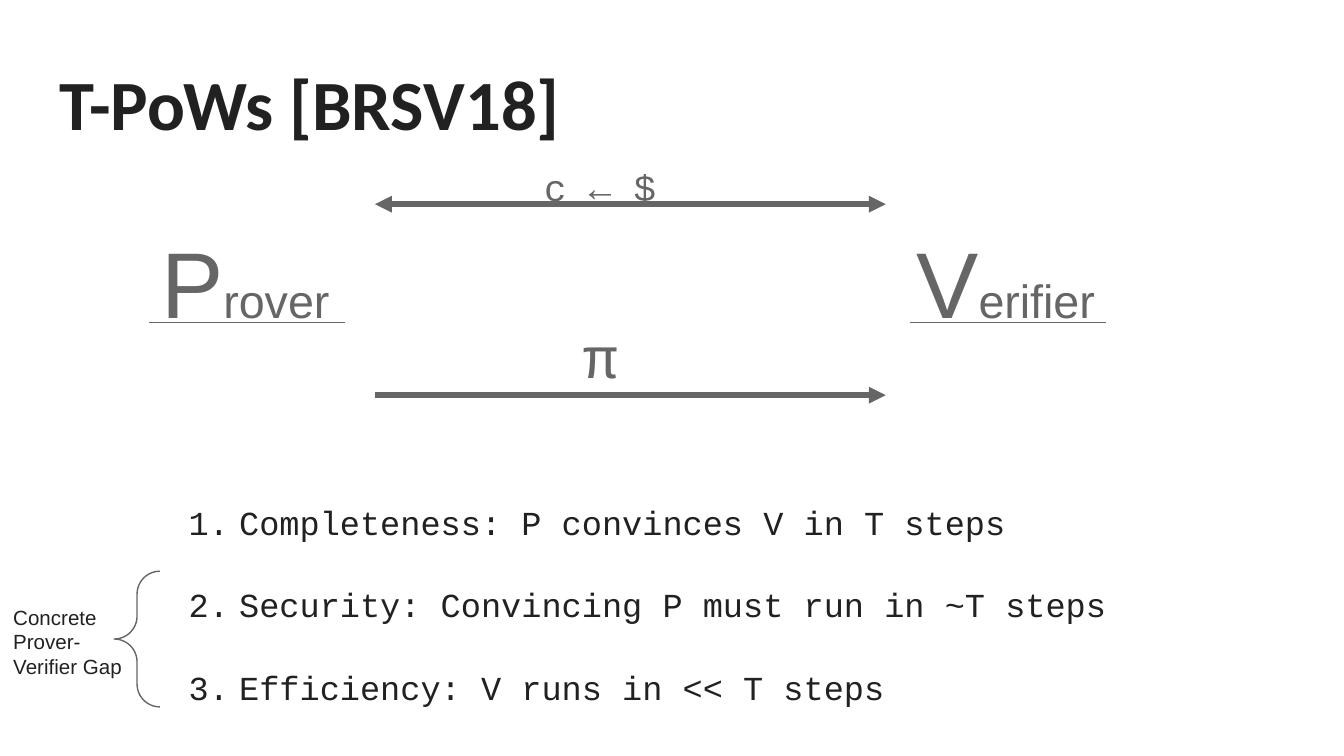
from dataclasses import dataclass

from lxml.etree import SubElement
from pptx import Presentation
from pptx.dml.color import RGBColor
from pptx.enum.shapes import MSO_CONNECTOR as Conn, MSO_SHAPE as Shape
from pptx.enum.text import MSO_ANCHOR as Anchor, MSO_AUTO_SIZE as AutoSize, PP_ALIGN as Align
from pptx.oxml.ns import qn
from pptx.util import Pt

COLORS = {"ink": "212121", "gray": "666666"}
INSET = 7.2


@dataclass
class Party:
    initial: str
    rest: str
    left: float
    width: float
    rule_left: float


@dataclass
class Message:
    text: str
    size: float
    box: tuple
    anchor: Anchor
    drop: float
    arrow_y: float
    ends: tuple


PARTIES = [
    Party("P", "rover", 79.2, 121.7, 79.9),
    Party("V", "erifier", 483.8, 112.3, 487.4),
]
MESSAGES = [
    Message("c ← $", 20, (283, 77.8, 77, 22.3), Anchor.TOP, 3, 109.4, ("headEnd", "tailEnd")),
    Message("π", 31, (280.8, 166.3, 82.1, 48.2), Anchor.MIDDLE, 0, 211.7, ("tailEnd",)),
]
PROPERTIES = [
    "Completeness: P convinces V in T steps",
    "Security: Convincing P must run in ~T steps",
    "Efficiency: V runs in << T steps",
]


def rgb(name: str) -> RGBColor:
    return RGBColor.from_string(COLORS[name])


def add_text(p, text: str, *, size: float, font: str = "Arial",
             color: str = "gray", bold: bool = False, align=Align.LEFT) -> None:
    p.alignment = align
    r = p.add_run()
    r.text = text
    r.font.size = Pt(size)
    r.font.name = font
    r.font.bold = bold
    r.font.color.rgb = rgb(color)


def set_frame(sp, box: tuple, anchor=Anchor.TOP, drop: float = 0):
    sp.left, sp.top, sp.width, sp.height = map(Pt, box)
    tf = sp.text_frame
    tf.word_wrap = True
    tf.auto_size = AutoSize.NONE
    tf.vertical_anchor = anchor
    tf.margin_left = tf.margin_right = tf.margin_bottom = Pt(INSET)
    tf.margin_top = Pt(INSET + drop)
    return tf


def add_box(slide, box: tuple, anchor=Anchor.TOP, drop: float = 0):
    return set_frame(slide.shapes.add_textbox(*map(Pt, box)), box, anchor, drop)


def add_line(slide, left: float, y: float, length: float,
             weight: float = 0.75, ends: tuple = ()) -> None:
    line = slide.shapes.add_connector(Conn.STRAIGHT, Pt(left), Pt(y), Pt(left + length), Pt(y))
    line.line.color.rgb = rgb("gray")
    line.line.width = Pt(weight)
    ln = line.line._get_or_add_ln()
    for end in ends:
        SubElement(ln, qn(f"a:{end}"), type="triangle")
    SubElement(line._element.spPr, qn("a:effectLst"))


def add_party(slide, party: Party) -> None:
    p = add_box(slide, (party.left, 109.4, party.width, 53.3), drop=4).paragraphs[0]
    add_text(p, party.initial, size=50)
    add_text(p, party.rest, size=25)
    add_line(slide, party.rule_left, 172.8, 105.1)


def add_message(slide, message: Message) -> None:
    add_line(slide, 200.9, message.arrow_y, 273.6, 3, message.ends)
    tf = add_box(slide, message.box, message.anchor, message.drop)
    add_text(tf.paragraphs[0], message.text, size=message.size,
             font="Courier New", align=Align.CENTER)


def add_numbered_list(slide, items: list[str]) -> None:
    tf = add_box(slide, (85, 258.5, 526.3, 127.4), drop=3)
    for i, item in enumerate(items):
        p = tf.add_paragraph() if i else tf.paragraphs[0]
        add_text(p, item, size=18, font="Courier New", color="ink")
        p.space_after = Pt(22.7)
        pPr = p._p.get_or_add_pPr()
        pPr.set("marL", str(Pt(36)))
        pPr.set("indent", str(-Pt(27)))
        SubElement(pPr, qn("a:buFont"), typeface="Courier New")
        SubElement(pPr, qn("a:buAutoNum"), type="arabicPeriod")


def add_gap_note(slide) -> None:
    brace = slide.shapes.add_shape(Shape.LEFT_BRACE, Pt(61.2), Pt(306), Pt(24.5), Pt(72.7))
    brace.shadow.inherit = False
    brace.fill.background()
    brace.line.color.rgb = rgb("gray")
    brace.line.width = Pt(0.75)
    brace.adjustments[0] = brace.adjustments[1] = 0.5
    tf = add_box(slide, (0, 316.8, 77, 38.2))
    add_text(tf.paragraphs[0], "Concrete Prover-", size=11, color="ink")
    add_text(tf.add_paragraph(), "Verifier Gap", size=11, color="ink")


def main() -> None:
    prs = Presentation()
    prs.slide_width, prs.slide_height = Pt(720), Pt(405)
    slide = prs.slides.add_slide(prs.slide_layouts[5])
    tf = set_frame(slide.shapes.title, (24.5, 23, 671, 63.4), drop=2)
    add_text(tf.paragraphs[0], "T-PoWs [BRSV18]", size=37.8, font="Calibri",
             color="ink", bold=True)
    for party in PARTIES:
        add_party(slide, party)
    for message in MESSAGES:
        add_message(slide, message)
    add_numbered_list(slide, PROPERTIES)
    add_gap_note(slide)
    prs.save("out.pptx")


if __name__ == "__main__":
    main()
